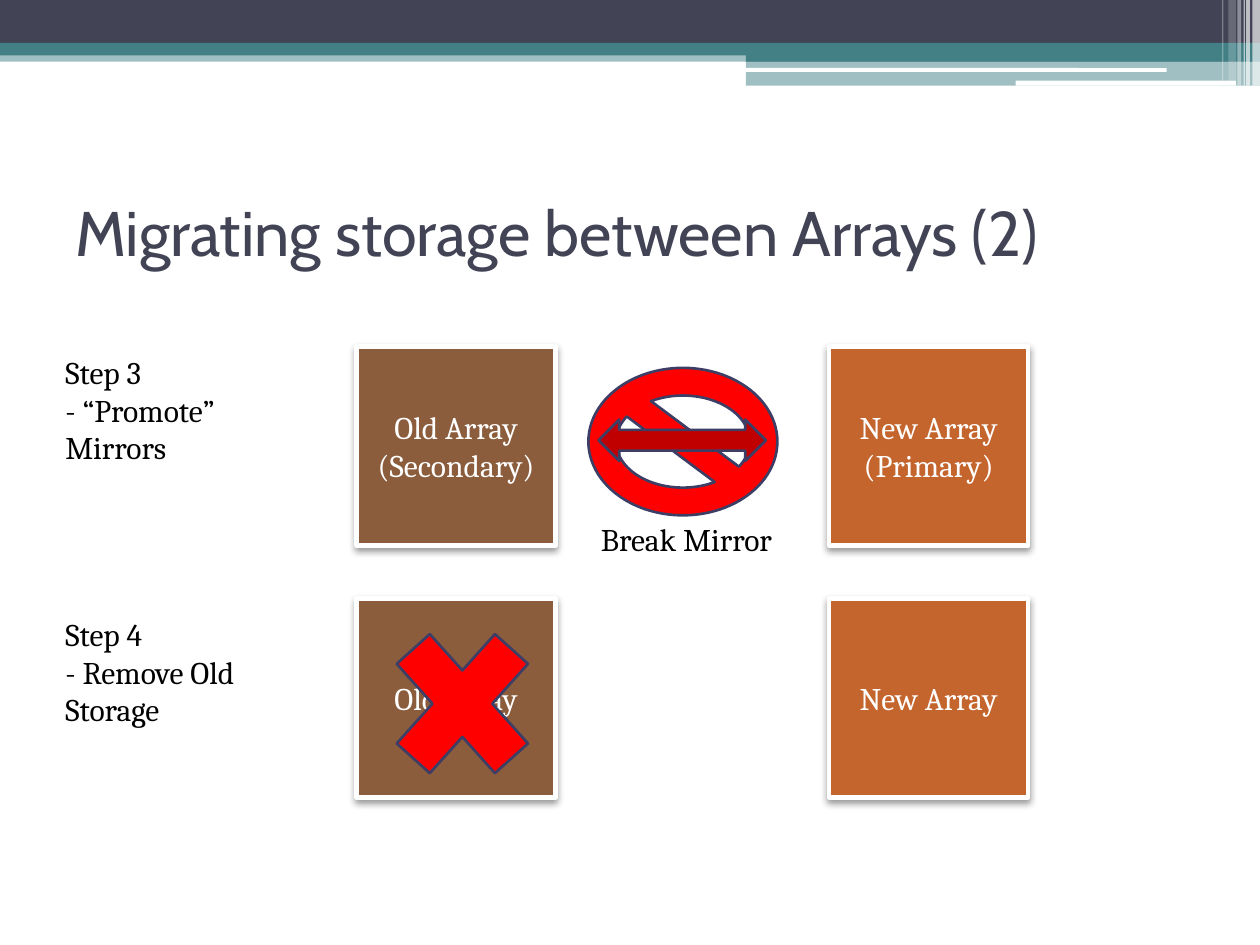
from lxml import etree
from pptx import Presentation
from pptx.dml.color import RGBColor
from pptx.enum.shapes import MSO_SHAPE as Shape
from pptx.enum.text import MSO_ANCHOR as Anchor, PP_ALIGN as Align
from pptx.oxml.ns import qn
from pptx.util import Inches, Pt

COLORS = {
    "navy": "424456", "teal": "438086", "white": "FFFFFF", "black": "000000",
    "brown": "8B5D3D", "orange": "C4652D", "red": "FF0000",
    "dark red": "C00000", "outline": "3D3E66",
}


class SlideBuilder:
    heading_font = "Cabin"
    body_font = "Cambria"
    body_size = 18

    def __init__(self, slide):
        self.slide = slide

    def color(self, name):
        return RGBColor.from_string(COLORS[name])

    def shape(self, kind, box, fill, line=None, width=1.5, opacity=100):
        shape = self.slide.shapes.add_shape(kind, *map(Inches, box))
        shape.shadow.inherit = False
        shape.fill.solid()
        shape.fill.fore_color.rgb = self.color(fill)
        if opacity < 100:
            tint = shape._element.spPr.find(f"{qn('a:solidFill')}/{qn('a:srgbClr')}")
            etree.SubElement(tint, qn("a:alpha"), val=str(opacity * 1000))
        if line:
            shape.line.color.rgb = self.color(line)
            shape.line.width = Pt(width)
        else:
            shape.line.fill.background()
        return shape

    def fill_text(self, frame, lines, color, size=body_size, font=body_font, align=Align.LEFT):
        frame.word_wrap = True
        frame.text = "\n".join(lines)
        for paragraph in frame.paragraphs:
            paragraph.alignment = align
            for run in paragraph.runs:
                run.font.size = Pt(size)
                run.font.name = font
                run.font.color.rgb = self.color(color)

    def label(self, box, *lines):
        label = self.slide.shapes.add_textbox(*map(Inches, box))
        self.fill_text(label.text_frame, lines, "black")

    def title(self, box, wording):
        title = self.slide.shapes.add_textbox(*map(Inches, box))
        title.text_frame.vertical_anchor = Anchor.MIDDLE
        self.fill_text(title.text_frame, [wording], "navy", 36, self.heading_font)

    def array(self, left, top, wording, fill):
        array = self.shape(Shape.RECTANGLE, (left, top, 1.58, 1.58), fill, "white", 2.5)
        array.text_frame.vertical_anchor = Anchor.MIDDLE
        self.fill_text(array.text_frame, [wording], "white", align=Align.CENTER)
        effects = array._element.spPr.find(qn("a:effectLst"))
        shadow = etree.SubElement(
            effects, qn("a:outerShdw"), blurRad=str(Pt(4.1)), dist=str(Pt(2)),
            dir="5400000", rotWithShape="0")
        tint = etree.SubElement(shadow, qn("a:srgbClr"), val=COLORS["black"])
        etree.SubElement(tint, qn("a:alpha"), val="40000")

    def banner(self):
        bands = [
            (0, 0.4, 10, 0.09, "teal", 50),
            (0, 0, 10, 0.34, "navy", 100),
            (0, 0.34, 10, 0.1, "teal", 100),
            (5.92, 0.39, 4.08, 0.1, "teal", 100),
            (5.92, 0.48, 4.08, 0.2, "teal", 50),
        ]
        for *box, fill, opacity in bands:
            self.shape(Shape.RECTANGLE, box, fill, opacity=opacity)
        for box in [(5.91, 0.54, 3.35, 0.03), (8.06, 0.64, 1.75, 0.04)]:
            self.shape(Shape.ROUNDED_RECTANGLE, box, "white")
        stripes = [
            (9.94, 0.06, 0.68, 65), (9.89, 0.03, 0.68, 65), (9.87, 0.01, 0.68, 60),
            (9.82, 0.03, 0.68, 40), (9.75, 0.06, 0.64, 20), (9.7, 0.01, 0.64, 30),
        ]
        for left, width, height, opacity in stripes:
            self.shape(Shape.RECTANGLE, (left, 0, width, height), "white", opacity=opacity)


def main():
    deck = Presentation()
    deck.slide_width, deck.slide_height = Inches(10), Inches(7.5)
    builder = SlideBuilder(deck.slides.add_slide(deck.slide_layouts[6]))

    builder.banner()
    builder.shape(Shape.NO_SYMBOL, (4.67, 2.92, 1.5, 1.17), "red", "outline")
    builder.title((0.5, 1.25, 9, 1.17), "Migrating storage between Arrays (2)")

    for top, old, new in [
        (2.75, "Old Array (Secondary)", "New Array (Primary)"),
        (4.75, "Old Array", "New Array"),
    ]:
        builder.array(2.83, top, old, "brown")
        builder.array(6.58, top, new, "orange")

    builder.label((4.67, 4.08, 1.75, 0.4), "Break Mirror")
    builder.shape(Shape.LEFT_RIGHT_ARROW, (4.75, 3.33, 1.33, 0.33), "dark red", "outline")
    builder.label((0.42, 2.75, 1.83, 1.01), "Step 3", "- “Promote” Mirrors")
    builder.label((0.42, 4.83, 1.83, 1.01), "Step 4", "- Remove Old Storage")
    builder.shape(Shape.MATH_MULTIPLY, (2.92, 4.75, 1.5, 1.67), "red", "outline")

    deck.save("out.pptx")


if __name__ == "__main__":
    main()
